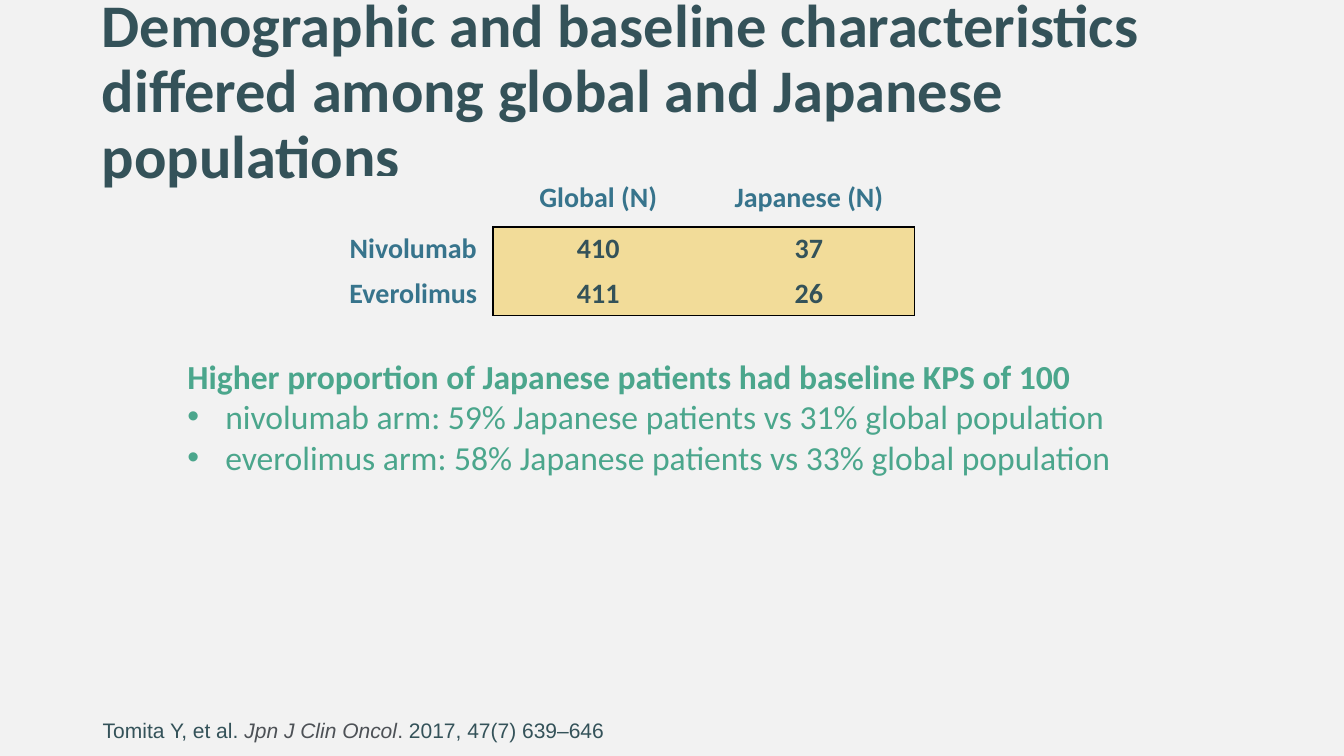
from dataclasses import dataclass
from typing import Any

from lxml import etree
from pptx import Presentation
from pptx import util as u
from pptx.dml.color import RGBColor
from pptx.enum import text
from pptx.oxml import ns


@dataclass(frozen=True)
class Theme:
    background: str = "F2F2F2"
    dark: str = "345259"
    blue: str = "37748C"
    green: str = "4BA68C"
    grey: str = "4D5156"
    sand: str = "F2DC99"
    border: str = "000000"
    heading_font: str = "Calibri"
    source_font: str = "Arial"
    title_size: float = 43.2
    list_size: float = 24
    table_size: float = 20
    source_size: float = 15


@dataclass(frozen=True)
class Box:
    left: float
    top: float
    width: float
    height: float


@dataclass(frozen=True)
class Style:
    font: str
    size: float
    color: str
    bold: bool = False
    italic: bool = False


@dataclass(frozen=True)
class Line:
    text: str
    bold: bool = False
    bullet: bool = False


T = Theme()
TITLE = "Demographic and baseline characteristics differed among global and Japanese populations"
TITLE_BOX = Box(65.5, 14.4, 840, 104.4)
LIST_BOX = Box(126.7, 250.6, 707, 123.8)
SOURCE_BOX = Box(66.2, 501.1, 828, 33.1)
TABLE_BOX = Box(238.3, 125.7, 414.8, 99.6)
COLUMN_WIDTHS = (113.8, 150.5, 150.5)
ROW_HEIGHTS = (36.4, 31.6, 31.6)
ARMS = (
    ("", "Global (N)", "Japanese (N)"),
    ("Nivolumab", "410", "37"),
    ("Everolimus", "411", "26"),
)
FINDINGS = (
    Line("Higher proportion of Japanese patients had baseline KPS of 100", bold=True),
    Line("nivolumab arm: 59% Japanese patients vs 31% global population", bullet=True),
    Line("everolimus arm: 58% Japanese patients vs 33% global population", bullet=True),
)
SOURCE = (
    ("Tomita Y, et al. ", Style(T.source_font, T.source_size, T.dark)),
    ("Jpn J Clin Oncol", Style(T.source_font, T.source_size, T.grey, italic=True)),
    (". ", Style(T.source_font, T.source_size, T.grey)),
    ("2017, 47(7) 639–646", Style(T.source_font, T.source_size, T.dark)),
)
# Border tag and the step to the neighbouring cell, in schema order
SIDES = (("a:lnL", 0, -1), ("a:lnR", 0, 1), ("a:lnT", -1, 0), ("a:lnB", 1, 0))


def format_run(r: Any, style: Style) -> None:
    r.font.name = style.font
    r.font.size = u.Pt(style.size)
    r.font.bold = style.bold
    r.font.italic = style.italic
    r.font.color.rgb = RGBColor.from_string(style.color)


def place(sp: Any, box: Box, anchor: text.MSO_ANCHOR) -> Any:
    """Move a placeholder and return its text frame."""
    sp.left, sp.top = u.Pt(box.left), u.Pt(box.top)
    sp.width, sp.height = u.Pt(box.width), u.Pt(box.height)
    tf = sp.text_frame
    tf.word_wrap = True
    tf.auto_size = text.MSO_AUTO_SIZE.NONE
    tf.vertical_anchor = anchor
    return tf


def set_bullet(p: Any, bullet: bool) -> None:
    """Give the paragraph a hanging bullet, or clear the inherited one."""
    pPr = p._p.get_or_add_pPr()
    indent = u.Pt(27) if bullet else 0
    pPr.set("marL", str(indent))
    pPr.set("indent", str(-indent))
    if bullet:
        etree.SubElement(pPr, ns.qn("a:buFont"), typeface="Arial")
        etree.SubElement(pPr, ns.qn("a:buChar"), char="•")
    else:
        etree.SubElement(pPr, ns.qn("a:buNone"))


def add_title(sp: Any) -> None:
    tf = place(sp, TITLE_BOX, text.MSO_ANCHOR.MIDDLE)
    tf.text = TITLE
    p = tf.paragraphs[0]
    p.alignment = text.PP_ALIGN.LEFT
    p.line_spacing = 0.9
    format_run(p.runs[0], Style(T.heading_font, T.title_size, T.dark, bold=True))


def add_findings(sp: Any) -> None:
    tf = place(sp, LIST_BOX, text.MSO_ANCHOR.TOP)
    tf.text = "\n".join(line.text for line in FINDINGS)
    for p, line in zip(tf.paragraphs, FINDINGS):
        p.space_before = u.Pt(0)
        set_bullet(p, line.bullet)
        format_run(p.runs[0], Style(T.heading_font, T.list_size, T.green, line.bold))


def add_source(sp: Any) -> None:
    p = place(sp, SOURCE_BOX, text.MSO_ANCHOR.BOTTOM).paragraphs[0]
    p.line_spacing = 0.9
    p.space_before = u.Pt(10)
    set_bullet(p, False)
    for words, style in SOURCE:
        r = p.add_run()
        r.text = words
        format_run(r, style)


def is_value(row: int, col: int) -> bool:
    return 1 <= row < len(ROW_HEIGHTS) and 1 <= col < len(COLUMN_WIDTHS)


def set_borders(cell: Any, row: int, col: int) -> None:
    """Outline the block of values and leave every other edge empty."""
    tcPr = cell._tc.get_or_add_tcPr()
    for i, (tag, down, right) in enumerate(SIDES):
        ln = etree.Element(ns.qn(tag), w=str(u.Pt(1)))
        if is_value(row, col) != is_value(row + down, col + right):
            fill = etree.SubElement(ln, ns.qn("a:solidFill"))
            etree.SubElement(fill, ns.qn("a:srgbClr"), val=T.border)
        else:
            etree.SubElement(ln, ns.qn("a:noFill"))
        tcPr.insert(i, ln)


def add_arms_table(slide: Any) -> None:
    b = TABLE_BOX
    table = slide.shapes.add_table(
        len(ROW_HEIGHTS), len(COLUMN_WIDTHS),
        u.Pt(b.left), u.Pt(b.top), u.Pt(b.width), u.Pt(b.height),
    ).table
    table.first_row = table.horz_banding = False
    for column, width in zip(table.columns, COLUMN_WIDTHS):
        column.width = u.Pt(width)
    for row, height in zip(table.rows, ROW_HEIGHTS):
        row.height = u.Pt(height)
    for i, values in enumerate(ARMS):
        for j, value in enumerate(values):
            cell = table.cell(i, j)
            boxed = is_value(i, j)
            cell.fill.solid()
            cell.fill.fore_color.rgb = RGBColor.from_string(T.sand if boxed else T.background)
            set_borders(cell, i, j)
            cell.text = value
            p = cell.text_frame.paragraphs[0]
            p.alignment = text.PP_ALIGN.CENTER
            color = T.dark if boxed else T.blue
            for r in p.runs:
                format_run(r, Style(T.heading_font, T.table_size, color, bold=True))


def main() -> None:
    prs = Presentation()
    prs.slide_width, prs.slide_height = u.Pt(960), u.Pt(540)
    slide = prs.slides.add_slide(prs.slide_layouts.get_by_name("Two Content"))
    slide.background.fill.solid()
    slide.background.fill.fore_color.rgb = RGBColor.from_string(T.background)
    title, findings, source = slide.placeholders
    add_title(title)
    add_findings(findings)
    add_source(source)
    add_arms_table(slide)
    prs.save("out.pptx")


if __name__ == "__main__":
    main()
